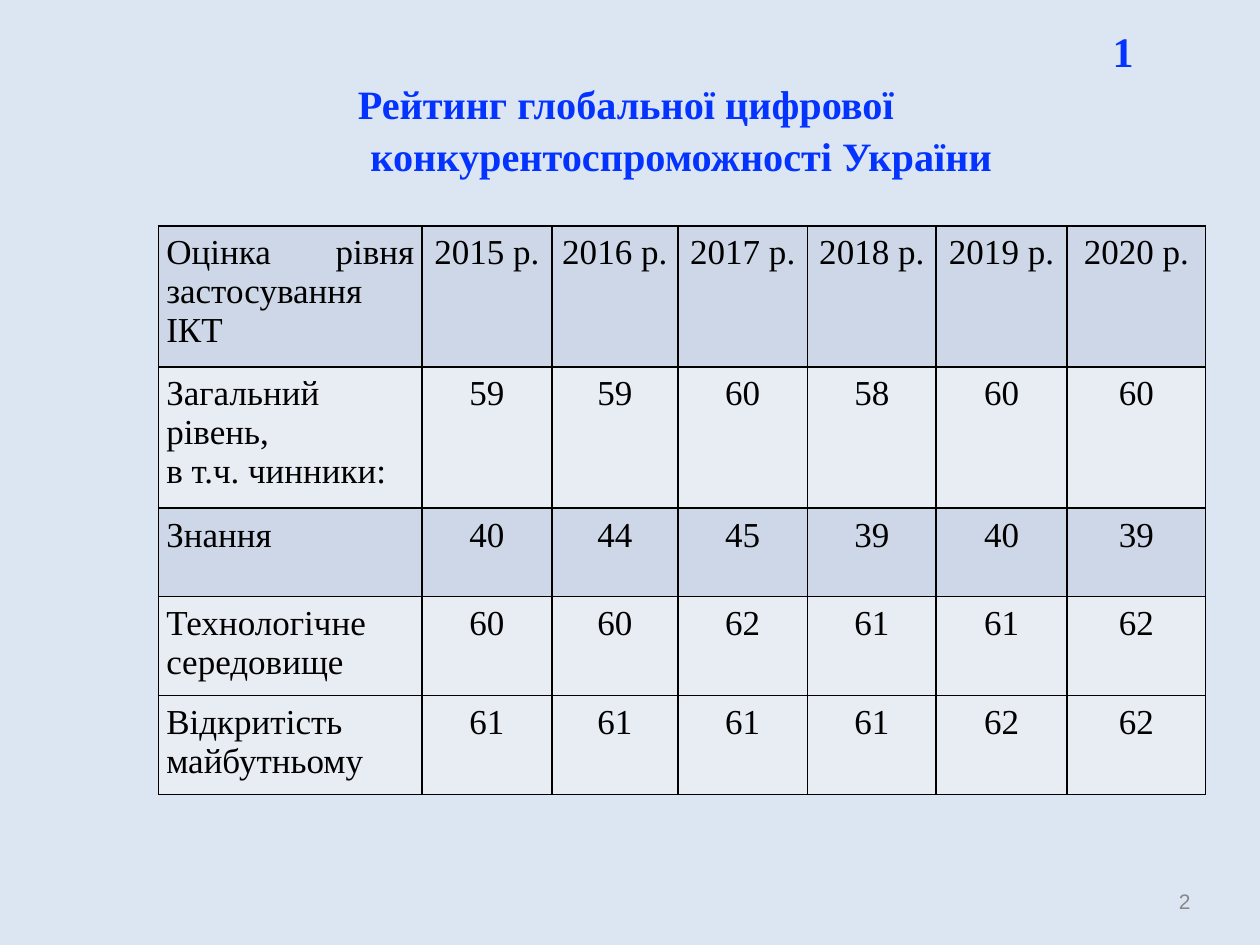
from lxml.etree import SubElement
from pptx import Presentation
from pptx.dml.color import RGBColor
from pptx.enum.text import MSO_ANCHOR, MSO_AUTO_SIZE, PP_ALIGN
from pptx.oxml.ns import qn
from pptx.util import Inches, Pt

WIDTH, HEIGHT = 10, 7.5
COLORS = {
    "background": "DCE6F2",
    "title": "0433FF",
    "ink": "000000",
    "page": "888888",
    "dark_row": "CED7E7",
    "light_row": "E8ECF3",
}
HEADINGS = ["Оцінка рівня застосування ІКТ"] + [f"{year} р." for year in range(2015, 2021)]
RATINGS = [
    ("Загальний рівень,\nв т.ч. чинники:", 59, 59, 60, 58, 60, 60),
    ("Знання", 40, 44, 45, 39, 40, 39),
    ("Технологічне середовище", 60, 60, 62, 61, 61, 62),
    ("Відкритість майбутньому", 61, 61, 61, 61, 62, 62),
]
COLUMN_WIDTHS = [2.09, 1.03, 1, 1.03, 1.02, 1.04, 1.1]
ROW_HEIGHTS = [1.11, 1.11, 0.7, 0.78, 0.78]
ROW_FILLS = ["dark_row", "light_row", "dark_row", "light_row", "light_row"]


def write(paragraph, text, size=20, color="ink", font="Times New Roman", bold=False,
          align=PP_ALIGN.LEFT, indent=0, spacing=None):
    paragraph.alignment = align
    if spacing:
        paragraph.line_spacing = spacing
    if indent:
        properties = paragraph._p.get_or_add_pPr()
        properties.set("marL", str(Inches(indent)))
        properties.set("indent", "0")
    run = paragraph.add_run()
    run.text = text
    run.font.size = Pt(size)
    run.font.name = font
    run.font.bold = bold
    run.font.color.rgb = RGBColor.from_string(COLORS[color])


class RatingSlide:
    def __init__(self, presentation):
        self.slide = presentation.slides.add_slide(presentation.slide_layouts[6])
        fill = self.slide.background.fill
        fill.solid()
        fill.fore_color.rgb = RGBColor.from_string(COLORS["background"])

    def place(self, x, y, w, h):
        """Turn shares of the slide's size into lengths."""
        return (Inches(x * WIDTH), Inches(y * HEIGHT),
                Inches(w * WIDTH), Inches(h * HEIGHT))

    def text(self, area, lines, wrap=True, anchor=MSO_ANCHOR.TOP, **style):
        """Write one paragraph per (text, format) pair in lines."""
        frame = self.slide.shapes.add_textbox(*self.place(*area)).text_frame
        frame.word_wrap = wrap
        frame.auto_size = MSO_AUTO_SIZE.SHAPE_TO_FIT_TEXT
        frame.vertical_anchor = anchor
        frame.margin_left = frame.margin_right = Inches(0.05)
        frame.margin_top = frame.margin_bottom = Inches(0.05)
        for index, (line, line_style) in enumerate(lines):
            paragraph = frame.add_paragraph() if index else frame.paragraphs[0]
            write(paragraph, line, **{**style, **line_style})

    def table(self, area, rows, widths, heights, fills):
        table = self.slide.shapes.add_table(len(rows), len(widths), *self.place(*area)).table
        for column, width in zip(table.columns, widths):
            column.width = Inches(width)
        for row, height, fill, values in zip(table.rows, heights, fills, rows):
            row.height = Inches(height)
            for index, (cell, value) in enumerate(zip(row.cells, values)):
                self.cell(cell, str(value), fill,
                          PP_ALIGN.CENTER if index else PP_ALIGN.JUSTIFY)

    def cell(self, cell, text, fill, align):
        cell.margin_left = cell.margin_right = Inches(0.06)
        cell.margin_top = cell.margin_bottom = Inches(0.06)
        frame = cell.text_frame
        for index, line in enumerate(text.split("\n")):
            paragraph = frame.add_paragraph() if index else frame.paragraphs[0]
            write(paragraph, line, align=align)
        properties = cell._tc.get_or_add_tcPr()
        for side in ("a:lnL", "a:lnR", "a:lnT", "a:lnB"):
            border = SubElement(properties, qn(side), w=str(Pt(1)))
            SubElement(SubElement(border, qn("a:solidFill")), qn("a:srgbClr"),
                       val=COLORS["ink"])
        cell.fill.solid()
        cell.fill.fore_color.rgb = RGBColor.from_string(COLORS[fill])


def main():
    presentation = Presentation()
    presentation.slide_width = Inches(WIDTH)
    presentation.slide_height = Inches(HEIGHT)
    rating = RatingSlide(presentation)
    rating.text((0.93, 0.936, 0.02, 0.036), [("2", {})], wrap=False,
                anchor=MSO_ANCHOR.MIDDLE, size=12, font="Arial", color="page",
                align=PP_ALIGN.RIGHT)
    rating.text((0.128, 0.017, 0.826, 0.157), [
        ("1", {"size": 24, "indent": 7.5}),
        ("Рейтинг глобальної цифрової", {"indent": 1.51}),
        ("конкурентоспроможності України", {"align": PP_ALIGN.CENTER}),
    ], size=23, color="title", bold=True, spacing=1.07)
    rating.table((0.126, 0.239, 0.831, 0.597), [HEADINGS] + RATINGS,
                 COLUMN_WIDTHS, ROW_HEIGHTS, ROW_FILLS)
    presentation.save("out.pptx")


if __name__ == "__main__":
    main()
